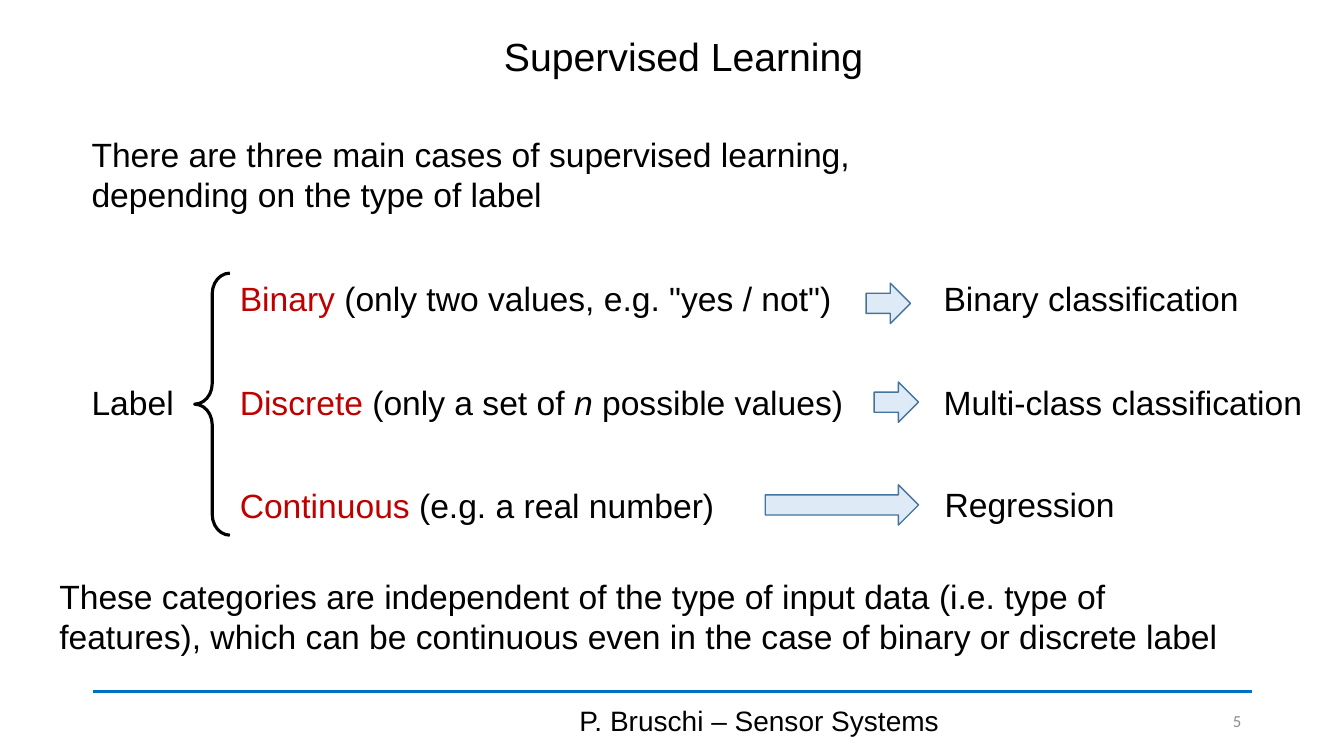
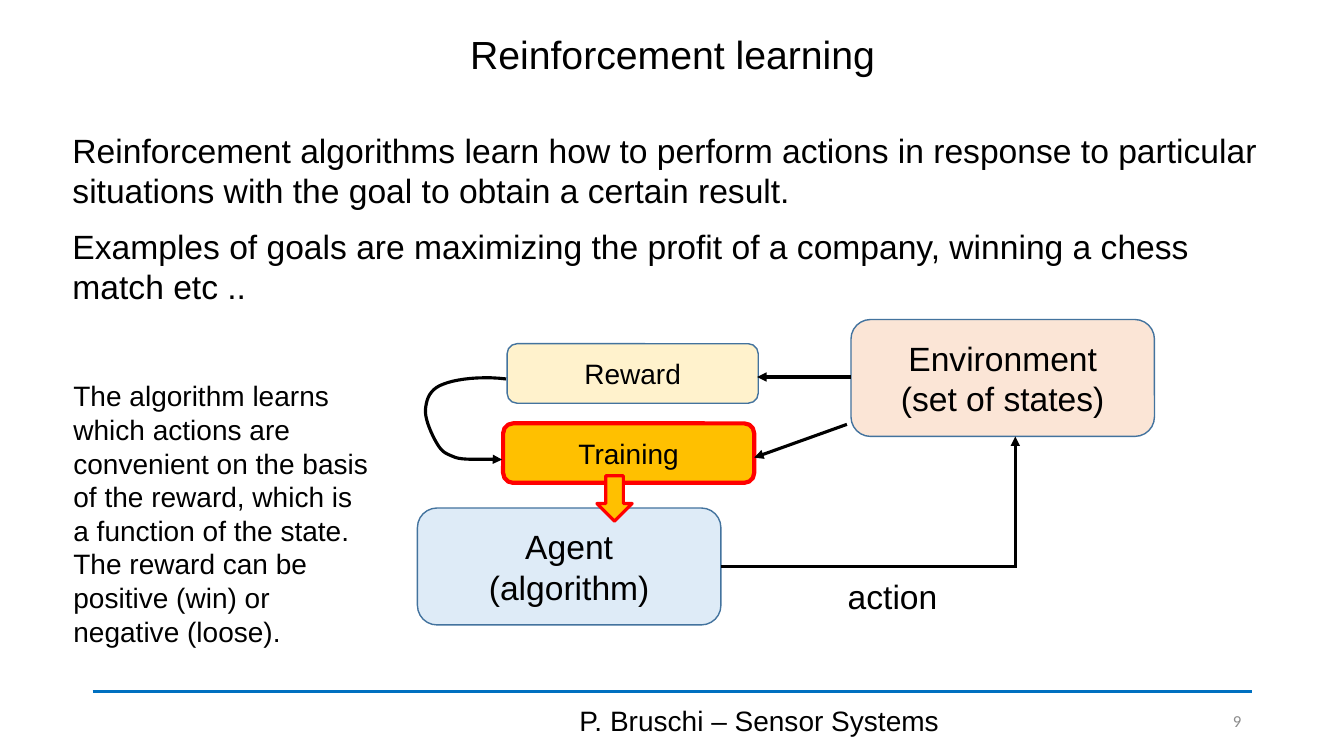
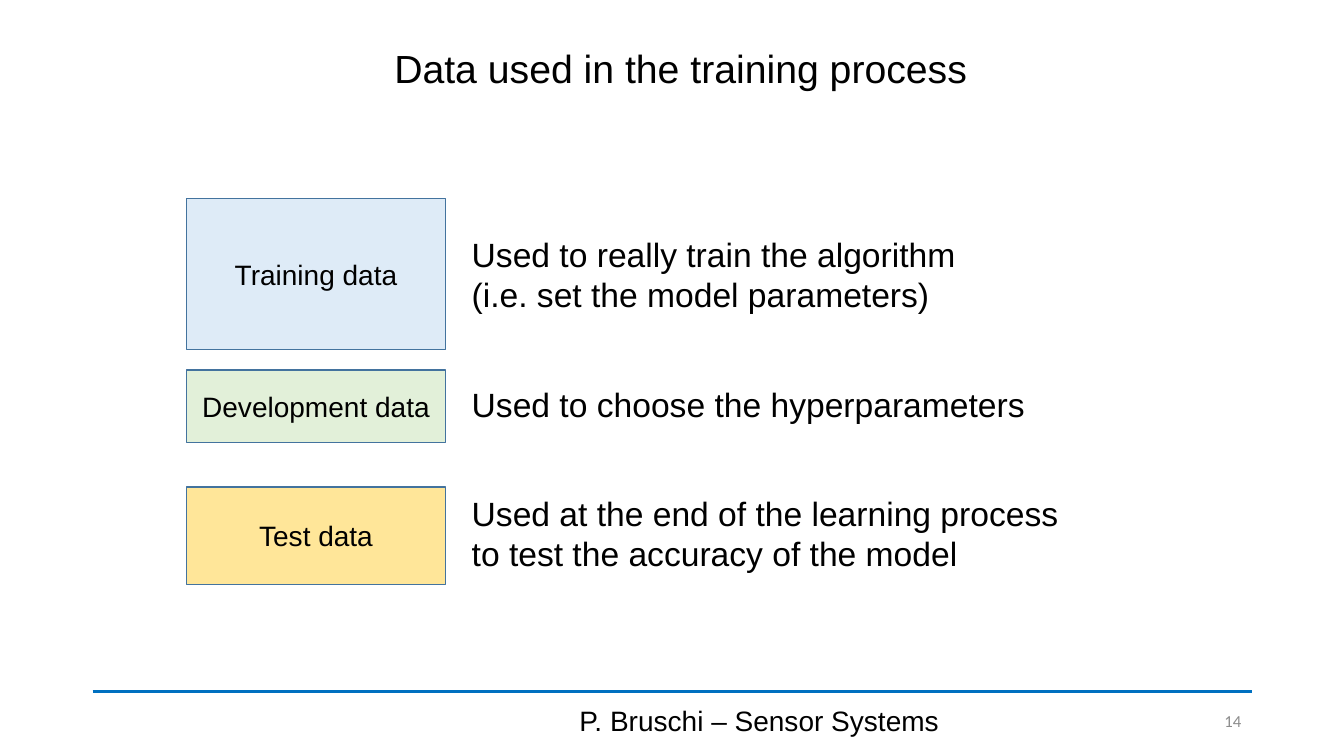
from pptx import Presentation
from pptx.util import Inches, Pt
from pptx.dml.color import RGBColor
from pptx.enum.shapes import MSO_SHAPE as Geo, MSO_CONNECTOR as Link
from pptx.enum.text import PP_ALIGN as Align, MSO_ANCHOR as Anchor
from pptx.oxml.ns import qn
from lxml.etree import SubElement

COLORS = {
    "black": "000000", "rule": "0070C0", "key": "C00000", "page": "8C8C8C",
    "edge": "43739E", "blue": "DEEBF7", "peach": "FBE5D6", "cream": "FFF2CC",
    "amber": "FFC000", "red": "FF0000", "green": "E2F0D9", "yellow": "FFE699",
}
FOOTER = "P. Bruschi – Sensor Systems"

# Label kinds: top, key word, rest as (text, italic), arrow box, task, task left and top
KINDS = [
    (2.71, "Binary", [(' (only two values, e.g. "yes / not")', False)],
     (8.59, 2.81, 0.44, 0.4), "Binary classification", 9.26, 2.71),
    (3.74, "Discrete", [(" (only a set of ", False), ("n", True), (" possible values)", False)],
     (8.67, 3.79, 0.44, 0.4), "Multi-class classification", 9.26, 3.74),
    (4.76, "Continuous", [(" (e.g. a real number)", False)],
     (7.59, 4.81, 1.52, 0.4), "Regression", 9.27, 4.75),
]

# Learning loop: box, lines, size, fill, edge, edge width
NODES = [
    ((8.44, 3.17, 3.01, 1.16), ["Environment", "(set of states)"], 24, "peach", "edge", 1),
    ((4.14, 5.04, 3.01, 1.16), ["Agent", "(algorithm)"], 24, "blue", "edge", 1),
    ((5.03, 3.41, 2.49, 0.59), ["Reward"], 20, "cream", "edge", 1),
    ((4.99, 4.2, 2.49, 0.59), ["Training"], 20, "amber", "red", 3),
]
# Links: start, end, arrowhead
LINKS = [
    ((7.15, 5.62), (10.09, 5.62), False),
    ((10.07, 5.62), (10.07, 4.33), True),
    ((8.44, 3.74), (7.51, 3.74), True),
    ((8.4, 4.21), (7.48, 4.54), True),
]
# Loop from reward to training: start, then Bezier triples
LOOP = [
    (5.02, 3.76), (4.77, 3.73), (4.53, 3.76), (4.4, 3.81),
    (4.26, 3.86), (4.23, 3.96), (4.22, 4.06),
    (4.21, 4.16), (4.29, 4.33), (4.34, 4.41),
    (4.39, 4.49), (4.42, 4.5), (4.52, 4.54),
    (4.62, 4.57), (4.8, 4.55), (4.98, 4.56),
]

# Data sets: top, height, name, fill, use, top of the use
SETS = [
    (1.97, 1.5, "Training data", "blue",
     ["Used to really train the algorithm", "(i.e. set the model parameters)"], 2.27),
    (3.67, 0.72, "Development data", "green", ["Used to choose the hyperparameters"], 3.76),
    (4.83, 0.97, "Test data", "yellow",
     ["Used at the end of the learning process to test the accuracy of the model"], 4.84),
]


def color(name):
    return RGBColor.from_string(COLORS[name])


def write(shape, lines, size, align=Align.LEFT, anchor=Anchor.TOP,
          hue="black", font="Arial"):
    frame = shape.text_frame
    frame.word_wrap = True
    frame.vertical_anchor = anchor
    for i, line in enumerate(lines):
        para = frame.add_paragraph() if i else frame.paragraphs[0]
        para.alignment = align
        para.font.size, para.font.name = Pt(size), font
        para.font.color.rgb = color(hue)
        para.add_run().text = line
    return para


def text(slide, box, lines, size=24, **style):
    return write(slide.shapes.add_textbox(*map(Inches, box)), lines, size, **style)


def shape(slide, geo, box, fill=None, edge="edge", width=1):
    item = slide.shapes.add_shape(geo, *map(Inches, box))
    item.shadow.inherit = False
    if fill:
        item.fill.solid()
        item.fill.fore_color.rgb = color(fill)
    else:
        item.fill.background()
    item.line.color.rgb = color(edge)
    item.line.width = Pt(width)
    return item


def label(item, lines, size):
    write(item, lines, size, Align.CENTER, Anchor.MIDDLE)


def point(item):
    SubElement(item.line._get_or_add_ln(), qn("a:tailEnd"), type="triangle")


def link(slide, start, end, head=False, hue="black", width=2.25):
    item = slide.shapes.add_connector(Link.STRAIGHT, *map(Inches, start + end))
    item.line.color.rgb = color(hue)
    item.line.width = Pt(width)
    SubElement(item._element.spPr, qn("a:effectLst"))
    if head:
        point(item)


def curve(slide, knots, steps=10):
    dots = [knots[0]]
    for k in range(0, len(knots) - 1, 3):
        a, b, c, d = knots[k:k + 4]
        for n in range(1, steps + 1):
            t = n / steps
            u = 1 - t
            dots.append(tuple(u**3 * p + 3 * u * u * t * q + 3 * u * t * t * r + t**3 * s
                              for p, q, r, s in zip(a, b, c, d)))
    dots = [(Inches(x), Inches(y)) for x, y in dots]
    pen = slide.shapes.build_freeform(*dots[0])
    pen.add_line_segments(dots[1:], close=False)
    item = pen.convert_to_shape()
    item.shadow.inherit = False
    item.fill.background()
    item.line.color.rgb = color("black")
    item.line.width = Pt(2.25)
    point(item)


def start(deck, title, left, top, page):
    """Blank slide with the shared title, rule and footer."""
    slide = deck.slides.add_slide(deck.slide_layouts[6])
    link(slide, (0.92, 6.86), (12.42, 6.86), hue="rule", width=2.75)
    para = text(slide, (left, top, 11.5, 0.72), [title], 28,
                align=Align.CENTER, anchor=Anchor.MIDDLE)
    para.line_spacing = 0.9
    text(slide, (4.42, 6.95, 6.22, 0.4), [FOOTER], 20,
         align=Align.CENTER, anchor=Anchor.MIDDLE)
    text(slide, (11.45, 6.95, 0.96, 0.4), [str(page)], 12, align=Align.RIGHT,
         anchor=Anchor.MIDDLE, hue="page", font="Calibri")
    return slide


def cases(deck):
    slide = start(deck, "Supervised Learning", 1.03, 0.22, 5)
    text(slide, (0.81, 1.28, 8.46, 0.91),
         ["There are three main cases of supervised learning, depending on the type of label"])
    text(slide, (0.81, 3.74, 1.1, 0.5), ["Label"])
    brace = shape(slide, Geo.LEFT_BRACE, (1.93, 2.71, 0.35, 2.6), edge="black", width=2.25)
    brace.adjustments[0] = 0.584
    for top, key, rest, arrow, task, left, level in KINDS:
        para = text(slide, (2.28, top, 6.4, 0.5), [key])
        para.runs[0].font.color.rgb = color("key")
        for words, slant in rest:
            run = para.add_run()
            run.text = words
            if slant:
                run.font.italic = True
            run.font.color.rgb = color("black")
        shape(slide, Geo.RIGHT_ARROW, arrow, "blue")
        text(slide, (left, level, 4, 0.5), [task])
    text(slide, (0.49, 5.66, 12.04, 0.91),
         ["These categories are independent of the type of input data (i.e. type of features), "
          "which can be continuous even in the case of binary or discrete label"])


def loop(deck):
    slide = start(deck, "Reinforcement learning", 0.92, 0.2, 9)
    text(slide, (0.62, 1.24, 12.08, 0.91),
         ["Reinforcement algorithms learn how to perform actions in response to particular "
          "situations with the goal to obtain a certain result."])
    text(slide, (0.62, 2.19, 12.08, 0.91),
         ["Examples of goals are maximizing the profit of a company, "
          "winning a chess match etc .."])
    for box, lines, size, fill, edge, width in NODES:
        label(shape(slide, Geo.ROUNDED_RECTANGLE, box, fill, edge, width), lines, size)
    for ends in LINKS:
        link(slide, *ends)
    curve(slide, LOOP)
    shape(slide, Geo.DOWN_ARROW, (5.92, 4.72, 0.35, 0.45), "amber", "red", 2.25)
    text(slide, (8.31, 5.66, 1.2, 0.5), ["action"])
    text(slide, (0.63, 3.71, 3.16, 2.79),
         ["The algorithm learns which actions are convenient on the basis of the reward, "
          "which is a function of the state. The reward can be positive (win) or "
          "negative (loose)."], 20)


def data(deck):
    slide = start(deck, "Data used in the training process", 1, 0.34, 14)
    for top, height, name, fill, use, level in SETS:
        label(shape(slide, Geo.RECTANGLE, (1.85, top, 2.57, height), fill), [name], 20)
        text(slide, (4.58, level, 6.22, 0.91), use)


def main():
    deck = Presentation()
    deck.slide_width, deck.slide_height = Inches(13.33), Inches(7.5)
    for build in (cases, loop, data):
        build(deck)
    deck.save("out.pptx")


if __name__ == "__main__":
    main()
